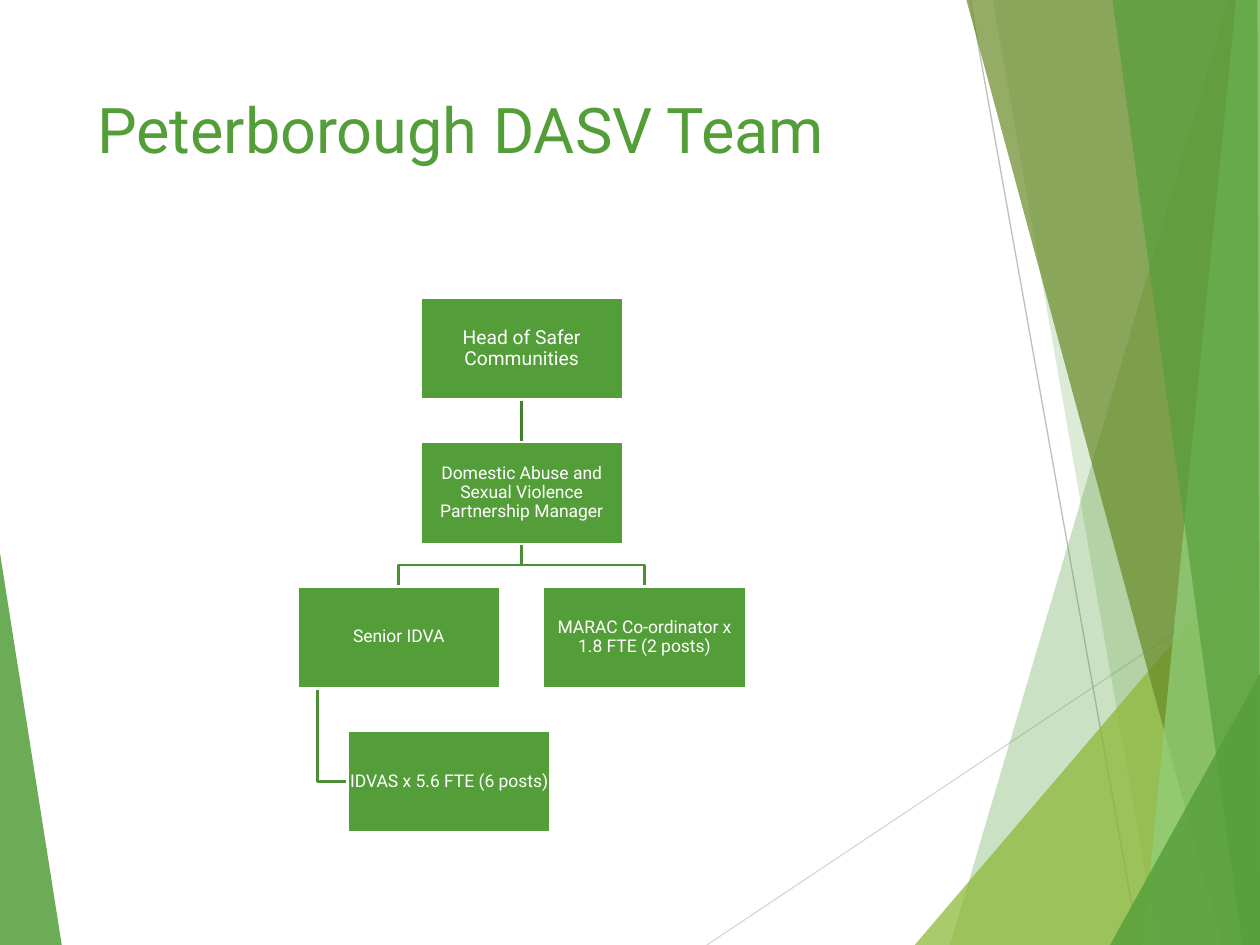
from lxml.etree import SubElement
from pptx import Presentation
from pptx.dml.color import RGBColor
from pptx.enum.shapes import MSO_CONNECTOR, MSO_SHAPE
from pptx.enum.text import MSO_ANCHOR, PP_ALIGN
from pptx.oxml.ns import qn
from pptx.util import Inches, Pt

GREEN = RGBColor(0x54, 0x9E, 0x39)
LIME = RGBColor(0x8A, 0xB8, 0x33)
OLIVE = RGBColor(0x67, 0x8A, 0x26)
MINT = RGBColor(0x93, 0xD0, 0x7D)
STEM = RGBColor(0x43, 0x7F, 0x2E)
BRANCH = RGBColor(0x4C, 0x8F, 0x34)
PALE = RGBColor(0xD9, 0xD9, 0xD9)
GREY = RGBColor(0xBF, 0xBF, 0xBF)
WHITE = RGBColor(0xFF, 0xFF, 0xFF)
FONT = "Roboto"
WIDE, HIGH = 10, 7.5

RAYS = [((5.61, HIGH), (WIDE, 4.57), PALE), ((7.7, 0), (9.04, HIGH), GREY)]
FACETS = [
    (GREEN, 85, [(0, 4.39), (0.49, HIGH), (0, HIGH)]),
    (GREEN, 30, [(9.75, 0), (7.54, HIGH), (WIDE, HIGH), (WIDE, 0)]),
    (GREEN, 20, [(7.88, 0), (9.19, HIGH), (WIDE, HIGH), (WIDE, 0)]),
    (LIME, 72, [(7.26, HIGH), (WIDE, 4.29), (WIDE, HIGH)]),
    (OLIVE, 70, [(7.67, 0), (9.7, HIGH), (WIDE, HIGH), (WIDE, 0)]),
    (MINT, 70, [(9.81, 0), (9.07, HIGH), (WIDE, HIGH), (WIDE, 0)]),
    (GREEN, 65, [(8.83, 0), (9.86, HIGH), (WIDE, HIGH), (9.98, 0)]),
    (GREEN, 80, [(8.81, HIGH), (WIDE, 5.35), (WIDE, HIGH)]),
]


def write(frame, text, size=10, color=WHITE, align=PP_ALIGN.CENTER,
          anchor=MSO_ANCHOR.MIDDLE, inset=None, spacing=None):
    """Put one formatted paragraph in a text frame."""
    frame.word_wrap = True
    frame.vertical_anchor = anchor
    if inset is not None:
        frame.margin_left = frame.margin_right = Inches(inset)
        frame.margin_top = frame.margin_bottom = Inches(inset)
    para = frame.paragraphs[0]
    para.text = text
    para.alignment = align
    para.line_spacing = spacing
    para.font.name = FONT
    para.font.size = Pt(size)
    para.font.color.rgb = color


def trace(slide, box, points, close=True):
    """Draw a path through points counted from the corner of the box."""
    left, top = box[:2]
    spots = [(Inches(left + x), Inches(top + y)) for x, y in points]
    pen = slide.shapes.build_freeform(*spots[0], scale=1.0)
    pen.add_line_segments(spots[1:], close=close)
    shape = pen.convert_to_shape()
    shape.shadow.inherit = False
    return shape


def link(slide, start, end, color, width):
    """Draw a straight line without a shadow."""
    ends = [Inches(v) for v in (*start, *end)]
    line = slide.shapes.add_connector(MSO_CONNECTOR.STRAIGHT, *ends)
    line.line.color.rgb = color
    line.line.width = Pt(width)
    SubElement(line._element.spPr, qn("a:effectLst"))
    return line


def add_decor(slide, box):
    """Place the thin rays and clear facets round the edges of the box."""
    left, top = box[:2]
    for (x1, y1), (x2, y2), color in RAYS:
        link(slide, (left + x1, top + y1), (left + x2, top + y2), color, 0.75)
    for color, alpha, points in FACETS:
        facet = trace(slide, box, points)
        facet.fill.solid()
        facet.fill.fore_color.rgb = color
        facet.line.fill.background()
        tint = facet._element.spPr.find(qn("a:solidFill"))[0]
        SubElement(tint, qn("a:alpha"), val=str(alpha * 1000))


def add_title(slide, box, text):
    """Move the title placeholder to the box and fill it."""
    title = slide.shapes.title
    title.left, title.top, title.width, title.height = map(Inches, box)
    write(title.text_frame, text, size=36, color=GREEN,
          align=PP_ALIGN.LEFT, anchor=MSO_ANCHOR.TOP)


def add_card(slide, box, text, size):
    """Add one post as a filled card with its text."""
    card = slide.shapes.add_shape(MSO_SHAPE.RECTANGLE, *map(Inches, box))
    card.shadow.inherit = False
    card.fill.solid()
    card.fill.fore_color.rgb = GREEN
    card.line.color.rgb = WHITE
    card.line.width = Pt(1.5)
    write(card.text_frame, text, size=size, inset=0.01, spacing=0.9)
    return card


def add_chart(slide, box):
    """Lay out the team tree in four even rows of the box."""
    left, top, width, height = box
    wide, high = 1.61, 0.81
    step = (height - high) / 3
    right, mid, dent = width - wide, (width - wide) / 2, 0.4
    axis, fork = width / 2, (step + high) / 2 + step
    posts = [
        (mid, 0, "Head of Safer Communities", 11),
        (mid, 1, "Domestic Abuse and Sexual Violence Partnership Manager", 10),
        (0, 2, "Senior IDVA", 10),
        (dent, 3, "IDVAS x 5.6 FTE (6 posts)", 10),
        (right, 2, "MARAC Co-ordinator x 1.8 FTE (2 posts)", 10),
    ]
    bend = step + high + (step - high) / 2
    side, foot = wide / 10, 3 * step + high / 2
    routes = [[(axis, step + high), (axis, bend), (x, bend), (x, 2 * step)]
              for x in (right + wide / 2, wide / 2)]
    routes.append([(side, 2 * step + high), (side, foot), (dent, foot)])
    for route in routes:
        path = trace(slide, box, route, close=False)
        path.fill.background()
        path.line.color.rgb = BRANCH
        path.line.width = Pt(1.5)
    stem = link(slide, (left + axis, top + high), (left + axis, top + step),
                STEM, 1.5)
    cards = [add_card(slide, (left + x, top + row * step, wide, high), text, size)
             for x, row, text, size in posts]
    stem.begin_connect(cards[0], 2)
    stem.end_connect(cards[1], 0)


def main():
    """Build the slide and save it."""
    deck = Presentation()
    deck.slide_width, deck.slide_height = Inches(WIDE), Inches(HIGH)
    slide = deck.slides.add_slide(deck.slide_layouts[5])
    add_decor(slide, (0, 0, WIDE, HIGH))
    add_title(slide, (0.67, 0.67, 6.94, 1.44), "Peterborough DASV Team")
    add_chart(slide, (2.36, 2.36, 3.56, 4.25))
    deck.save("out.pptx")


if __name__ == "__main__":
    main()
